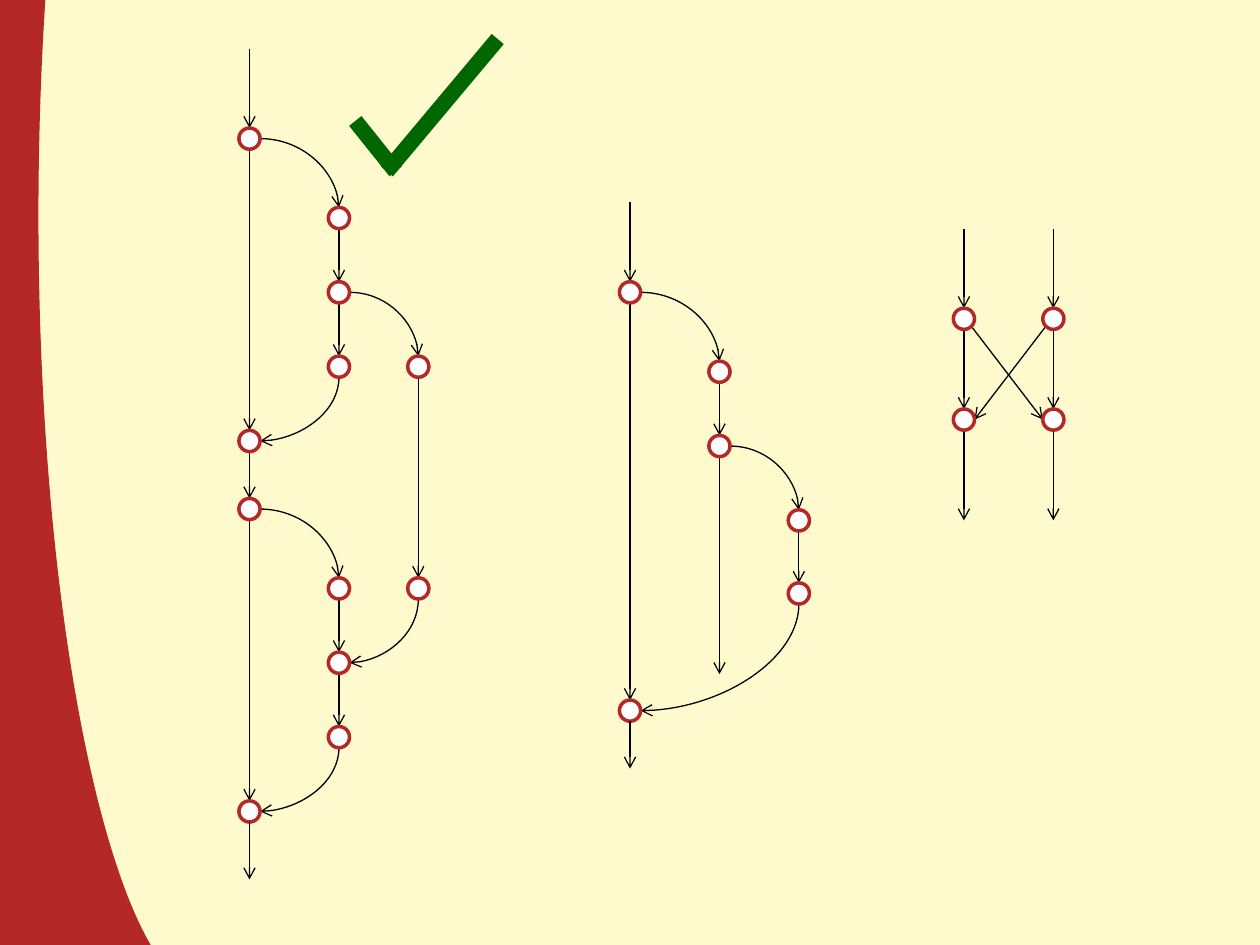
"""Build a slide of three fork-and-join flow graphs, the first one ticked."""
from dataclasses import dataclass
from math import sqrt

from lxml import etree
from pptx import Presentation
from pptx.dml.color import RGBColor
from pptx.enum.shapes import MSO_CONNECTOR, MSO_SHAPE
from pptx.oxml.ns import qn
from pptx.util import Inches, Pt

STRAIGHT, CURVE = MSO_CONNECTOR.STRAIGHT, MSO_CONNECTOR.CURVE
OVAL, ARC = MSO_SHAPE.OVAL, MSO_SHAPE.ARC
QUARTER_TURN = "5400000"


@dataclass(frozen=True)
class Theme:
    cream: RGBColor = RGBColor(0xFF, 0xFA, 0xCD)
    red: RGBColor = RGBColor(0xB4, 0x28, 0x28)
    black: RGBColor = RGBColor(0, 0, 0)
    white: RGBColor = RGBColor(0xFF, 0xFF, 0xFF)
    green: RGBColor = RGBColor(0, 0x66, 0)
    edge: float = 0.75
    ring: float = 2
    tick: float = 9
    band: float = 80
    radius: float = 0.084


class FlowSlide:
    def __init__(self, slide, theme):
        self.slide, self.theme = slide, theme
        slide.background.fill.solid()
        slide.background.fill.fore_color.rgb = theme.cream

    def side_band(self, left, top, width, height, start, end):
        band = self.slide.shapes.add_shape(ARC, *map(Inches, (left, top, width, height)))
        band.adjustments[0], band.adjustments[1] = start, end
        band.element.spPr.find(qn("a:xfrm")).set("flipH", "1")
        band.shadow.inherit = False
        band.fill.background()
        band.line.color.rgb = self.theme.red
        band.line.width = Pt(self.theme.band)

    def node(self, x, y):
        r = self.theme.radius
        ring = self.slide.shapes.add_shape(OVAL, *map(Inches, (x - r, y - r, 2 * r, 2 * r)))
        ring.shadow.inherit = False
        ring.fill.solid()
        ring.fill.fore_color.rgb = self.theme.white
        ring.line.color.rgb = self.theme.red
        ring.line.width = Pt(self.theme.ring)

    def stroke(self, start, end, color, width, kind=STRAIGHT):
        line = self.slide.shapes.add_connector(kind, *map(Inches, (*start, *end)))
        line.line.color.rgb = color
        line.line.width = Pt(width)
        etree.SubElement(line.element.spPr, qn("a:effectLst"))
        return line

    def arrow(self, start, end, kind=STRAIGHT):
        edge = self.stroke(start, end, self.theme.black, self.theme.edge, kind)
        head = etree.SubElement(edge.element.spPr.find(qn("a:ln")), qn("a:tailEnd"))
        head.set("type", "arrow")
        return edge

    def bend(self, start, end):
        arrow = self.arrow(start, end, CURVE)
        arrow.element.spPr.find(qn("a:prstGeom")).set("prst", "curvedConnector2")
        return arrow

    def enter(self, node, length=0.63):
        x, top = node[0], node[1] - self.theme.radius
        self.arrow((x, top - length), (x, top))

    def leave(self, node, bottom):
        self.arrow((node[0], node[1] + self.theme.radius), (node[0], bottom))

    def step(self, node, following):
        self.leave(node, following[1] - self.theme.radius)

    def fork(self, node, branch):
        r = self.theme.radius
        self.bend((node[0] + r, node[1]), (branch[0], branch[1] - r))

    def join(self, branch, node):
        r = self.theme.radius
        (right, top), (left, bottom) = (branch[0], branch[1] + r), (node[0] + r, node[1])
        mid_x, mid_y = (left + right) / 2, (top + bottom) / 2
        half_w, half_h = (bottom - top) / 2, (right - left) / 2
        curve = self.bend((mid_x - half_w, mid_y - half_h), (mid_x + half_w, mid_y + half_h))
        curve.element.spPr.find(qn("a:xfrm")).set("rot", QUARTER_TURN)

    def cross(self, node, target, side):
        r = self.theme.radius
        corner = r / sqrt(2)
        self.arrow((node[0] + side * corner, node[1] + corner), (target[0] - side * r, target[1]))

    def graph(self, nodes, steps, forks=(), joins=()):
        for draw, pairs in ((self.step, steps), (self.fork, forks), (self.join, joins)):
            for start, end in pairs:
                draw(nodes[start], nodes[end])
        for center in nodes.values():
            self.node(*center)


def lay_out(left, rows):
    """Place each row's named nodes in the main, branch and inner lanes."""
    lanes = (left, left + 0.71, left + 1.34)
    return {name: (lanes[lane], y) for y, places in rows for name, lane in places.items()}


def nested_graph(flow):
    nodes = lay_out(1.98, [
        (1.10, {"fork1": 0}), (1.73, {"a": 1}), (2.32, {"fork2": 1}),
        (2.91, {"b": 1, "c": 2}), (3.50, {"join1": 0}), (4.04, {"fork3": 0}),
        (4.67, {"d": 1, "e": 2}), (5.26, {"join2": 1}), (5.85, {"f": 1}),
        (6.44, {"join3": 0}),
    ])
    flow.enter(nodes["fork1"])
    flow.graph(
        nodes,
        steps=[("fork1", "join1"), ("a", "fork2"), ("fork2", "b"), ("c", "e"),
               ("join1", "fork3"), ("fork3", "join3"), ("d", "join2"), ("join2", "f")],
        forks=[("fork1", "a"), ("fork2", "c"), ("fork3", "d")],
        joins=[("b", "join1"), ("e", "join2"), ("f", "join3")],
    )
    flow.leave(nodes["join3"], 6.98)


def open_graph(flow):
    nodes = lay_out(5, [
        (2.32, {"fork1": 0}), (2.95, {"a": 1}), (3.54, {"fork2": 1}),
        (4.13, {"b": 2}), (4.71, {"c": 2}), (5.64, {"join": 0}),
    ])
    flow.enter(nodes["fork1"])
    flow.leave(nodes["fork2"], 5.35)
    flow.graph(
        nodes,
        steps=[("fork1", "join"), ("a", "fork2"), ("b", "c")],
        forks=[("fork1", "a"), ("fork2", "b")],
        joins=[("c", "join")],
    )
    flow.leave(nodes["join"], 6.1)


def crossed_graph(flow):
    nodes = lay_out(7.65, [(2.53, {"a": 0, "b": 1}), (3.33, {"c": 0, "d": 1})])
    for source, sink in (("a", "c"), ("b", "d")):
        flow.enter(nodes[source])
        flow.leave(nodes[sink], 4.13)
    flow.cross(nodes["a"], nodes["d"], 1)
    flow.cross(nodes["b"], nodes["c"], -1)
    flow.graph(nodes, steps=[("a", "c"), ("b", "d")])


def main():
    deck = Presentation()
    deck.slide_width, deck.slide_height = Inches(10), Inches(7.5)
    theme = Theme()
    flow = FlowSlide(deck.slides.add_slide(deck.slide_layouts[6]), theme)
    flow.side_band(-0.25, -4.83, 3.08, 13.08, 177.67, 55.34)
    open_graph(flow)
    crossed_graph(flow)
    nested_graph(flow)
    flow.stroke((2.82, 0.96), (3.14, 1.36), theme.green, theme.tick)
    flow.stroke((3.07, 1.36), (3.95, 0.31), theme.green, theme.tick)
    deck.save("out.pptx")


if __name__ == "__main__":
    main()
